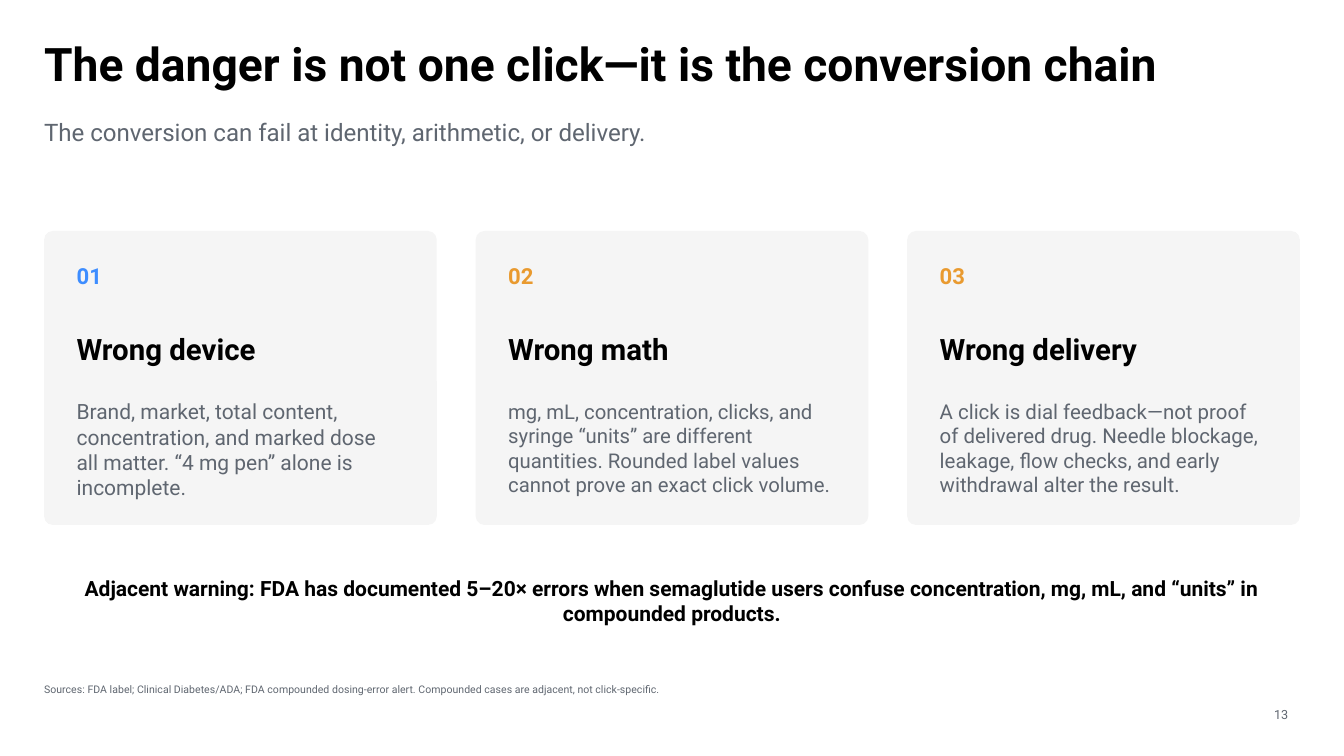
"""Build the slide on the three ways a dose conversion can fail."""
from pptx import Presentation
from pptx.dml.color import RGBColor
from pptx.enum.shapes import MSO_SHAPE as Shape
from pptx.enum.text import MSO_ANCHOR as Anchor, MSO_AUTO_SIZE as AutoSize, PP_ALIGN as Align
from pptx.util import Pt

PX = 9525
COLORS = {"ink": "000000", "muted": "5F6670", "card": "F5F5F5",
          "blue": "3D8DFF", "orange": "E99A2F"}
LEFT, WIDTH = 42, 1196
CARD_TOP, CARD_WIDTH, CARD_HEIGHT, CARD_STEP = 220, 374, 280, 411
INSET = 31


def place(box, left, top, width, height):
    box.left, box.top, box.width, box.height = [n * PX for n in (left, top, width, height)]


def write(box, text, size, color, bold=False, align=Align.LEFT, anchor=Anchor.TOP):
    frame = box.text_frame
    frame.word_wrap = True
    frame.auto_size = AutoSize.NONE
    frame.vertical_anchor = anchor
    frame.margin_left = frame.margin_top = frame.margin_right = frame.margin_bottom = 0
    para = frame.paragraphs[0]
    para.alignment = align
    span = para.add_run()
    span.text = text
    span.font.name = "Roboto"
    span.font.size = Pt(size)
    span.font.bold = bold
    span.font.color.rgb = RGBColor.from_string(COLORS[color])


deck = Presentation()
deck.slide_width, deck.slide_height = 1280 * PX, 720 * PX
page = deck.slides.add_slide(deck.slide_layouts[5])

title = page.shapes.title
place(title, LEFT, 34, WIDTH, 92)
write(title, "The danger is not one click—it is the conversion chain", 33, "ink", True)

subtitle = page.shapes.add_textbox(0, 0, 0, 0)
place(subtitle, LEFT, 112, 1050, 48)
write(subtitle, "The conversion can fail at identity, arithmetic, or delivery.", 17.2, "muted")

failures = [
    ("Wrong device", "blue", 15,
     "Brand, market, total content, concentration, and marked dose all matter. "
     "“4 mg pen” alone is incomplete."),
    ("Wrong math", "orange", 14.5,
     "mg, mL, concentration, clicks, and syringe “units” are different quantities. "
     "Rounded label values cannot prove an exact click volume."),
    ("Wrong delivery", "orange", 14.6,
     "A click is dial feedback—not proof of delivered drug. "
     "Needle blockage, leakage, flow checks, and early withdrawal alter the result."),
]
for index, (heading, accent, detail_size, detail) in enumerate(failures):
    card_left = LEFT + index * CARD_STEP
    card = page.shapes.add_shape(Shape.ROUNDED_RECTANGLE, 0, 0, 0, 0)
    place(card, card_left, CARD_TOP, CARD_WIDTH, CARD_HEIGHT)
    card.adjustments[0] = 0.03
    card.shadow.inherit = False
    card.fill.solid()
    card.fill.fore_color.rgb = RGBColor.from_string(COLORS["card"])
    card.line.fill.background()
    card_texts = [
        (f"{index + 1:02}", 250, 70, 38, 15.8, accent, True),
        (heading, 315, 310, 44, 21, "ink", True),
        (detail, 380, 310, 105, detail_size, "muted", False),
    ]
    for text, top, width, height, size, color, bold in card_texts:
        box = page.shapes.add_textbox(0, 0, 0, 0)
        place(box, card_left + INSET, top, width, height)
        write(box, text, size, color, bold)

warning = page.shapes.add_textbox(0, 0, 0, 0)
place(warning, LEFT, 548, WIDTH, 65)
write(warning, "Adjacent warning: FDA has documented 5–20× errors when semaglutide users confuse "
      "concentration, mg, mL, and “units” in compounded products.", 15, "ink", True, Align.CENTER)

sources = page.shapes.add_textbox(0, 0, 0, 0)
place(sources, LEFT, 650, 1120, 32)
write(sources, "Sources: FDA label; Clinical Diabetes/ADA; FDA compounded dosing-error alert. "
      "Compounded cases are adjacent, not click-specific.", 7.5, "muted")

number = page.shapes.add_textbox(0, 0, 0, 0)
place(number, 1185, 670, 42, 18)
write(number, "13", 9, "muted", align=Align.RIGHT, anchor=Anchor.BOTTOM)

deck.save("out.pptx")
